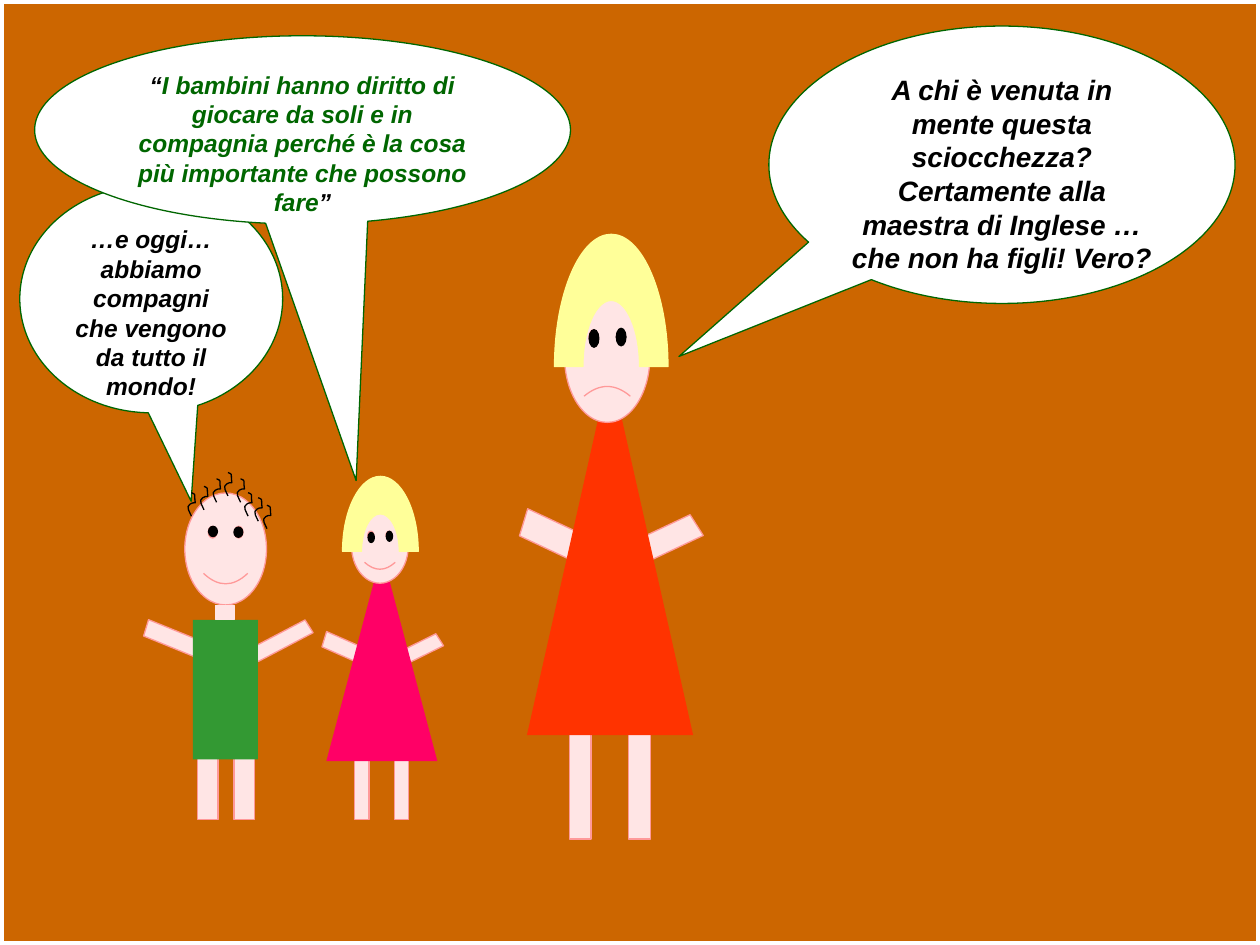
from dataclasses import dataclass
from typing import NamedTuple, Optional

import lxml.etree
import pptx
import pptx.dml.color
import pptx.enum.shapes
import pptx.enum.text
import pptx.oxml.ns
import pptx.util

Pt = pptx.util.Pt
MSO = pptx.enum.shapes.MSO_SHAPE
qn = pptx.oxml.ns.qn
Point = tuple[float, float]

SKIN, BLUSH, BLOND = "FFE5E5", "FF9999", "FFFF99"
BLACK, WHITE, GREEN = "000000", "FFFFFF", "006600"
KAPPA = 0.55


class Box(NamedTuple):
    x: float
    y: float
    w: float
    h: float


@dataclass
class Figure:
    right_arm: Box
    left_arm: Box
    legs: list[Box]
    body: Box
    body_kind: int
    body_color: str
    head: Box
    smile: float
    eyes: list[Box]
    hair: Optional[Box] = None


@dataclass
class Bubble:
    box: Box
    tip: Point
    size: float
    runs: list[tuple[str, str]]


CHILD_SMILE, FROWN = 0.047, -0.037

BOY = Figure(
    Box(155.2, 348.5, 11.5, 35.3), Box(93.4, 347.8, 13, 35.3),
    [Box(x, 427, 11.7, 41.4) for x in (112.9, 133.7)],
    Box(110.2, 354.2, 37.2, 79.8), MSO.RECTANGLE, "339933",
    Box(105.6, 281.7, 46.7, 64), CHILD_SMILE,
    [Box(133.3, 300.8, 5.8, 6.6), Box(118.8, 300.4, 5.8, 6.6)])
GIRL = Figure(
    Box(234.5, 358.6, 10.8, 25.2), Box(190.8, 357.8, 12.2, 25.2),
    [Box(x, 428.4, 8.1, 39.8) for x in (202.8, 225.4)],
    Box(186.5, 315.4, 63.4, 119.5), MSO.ISOSCELES_TRIANGLE, "FF0066",
    Box(200.9, 290.9, 32.4, 42.4), CHILD_SMILE,
    [Box(220.4, 303.2, 4.3, 6.5), Box(210, 303.9, 4.3, 6.5)],
    Box(195.8, 272.2, 43.2, 85.7))
WOMAN = Figure(
    Box(371.7, 289.4, 18.7, 37.4), Box(305.5, 287.8, 21.6, 37.4),
    [Box(x, 409.7, 12.4, 69.8) for x in (325.4, 359.2)],
    Box(301.1, 209.4, 95, 210.7), MSO.ISOSCELES_TRIANGLE, "FF3300",
    Box(322.6, 166, 48.8, 75.4), FROWN,
    [Box(351.8, 187.2, 6.3, 10.8), Box(336.3, 188, 6.3, 10.8)],
    Box(316.9, 133.9, 64.8, 151.2))

NECK = Box(123.1, 346, 10.8, 8)
CURL = [[(3.6, 13.4)], [(2.9, 11.5), (0, 7.9), (2.9, 6.5)],
        [(3.6, 5.8), (5, 5.8), (5.8, 5.8)], [(5, 0), (6.5, 1.4), (3.6, 0)]]
CURL_SPOTS = [(105.8, 281.5), (113, 277.9), (133.9, 273.6), (138.2, 281.5),
              (126.7, 270), (149, 288.7), (144, 284.4), (120.2, 273.6)]

TODAY = Bubble(
    Box(11.3, 105.6, 150.2, 130.3), (0.152, 0.888), 14,
    [("…e oggi… abbiamo compagni che vengono da tutto il mondo!", BLACK)])
DOUBT = Bubble(
    Box(439.4, 14.9, 266.4, 158.5), (-0.693, 0.691), 16,
    [("A chi è venuta in mente questa sciocchezza? Certamente alla maestra "
      "di Inglese … che non ha figli! Vero?", BLACK)])
RIGHT_TO_PLAY = Bubble(
    Box(19.8, 20.5, 306.2, 107.6), (0.1, 1.862), 14,
    [("“", BLACK),
     ("I bambini hanno diritto di giocare da soli e in compagnia perché è "
      "la cosa più importante che possono fare", GREEN),
     ("”", BLACK)])


def rgb(color: str) -> pptx.dml.color.RGBColor:
    return pptx.dml.color.RGBColor.from_string(color)


def paint(sp, fill: Optional[str], line: Optional[str], width: float = 0.75) -> None:
    sp.shadow.inherit = False
    if fill:
        sp.fill.solid()
        sp.fill.fore_color.rgb = rgb(fill)
    else:
        sp.fill.background()
    if line:
        sp.line.color.rgb = rgb(line)
        sp.line.width = Pt(width)
    else:
        sp.line.fill.background()


def add_shape(shapes, kind: int, box: Box, fill: Optional[str],
              line: Optional[str] = None, width: float = 0.75):
    sp = shapes.add_shape(kind, *map(Pt, box))
    paint(sp, fill, line, width)
    return sp


def add_curve(shapes, segments: list[list[Point]], fill: Optional[str],
              line: str, close: bool):
    points = [(Pt(x), Pt(y)) for segment in segments for x, y in segment]
    builder = shapes.build_freeform(*points[0], scale=1.0)
    builder.add_line_segments(points[1:], close=close)
    sp = builder.convert_to_shape()
    outline = next(sp._element.iter(qn("a:path")))
    steps = iter(outline.findall(qn("a:lnTo")))
    for segment in segments[1:]:
        first = next(steps)
        if len(segment) == 3:
            curve = lxml.etree.Element(qn("a:cubicBezTo"))
            first.addprevious(curve)
            for step in (first, next(steps), next(steps)):
                curve.append(step[0])
                outline.remove(step)
    paint(sp, fill, line)
    return sp, outline


def half_ellipse(cx: float, cy: float, rx: float, ry: float) -> list[list[Point]]:
    kx, ky = rx * KAPPA, ry * KAPPA
    return [[(cx - rx, cy)],
            [(cx - rx, cy - ky), (cx - kx, cy - ry), (cx, cy - ry)],
            [(cx + kx, cy - ry), (cx + rx, cy - ky), (cx + rx, cy)]]


def add_hair(shapes, box: Box) -> None:
    cx, cy = box.x + box.w / 2, box.y + box.h / 2
    inner = half_ellipse(cx, cy, box.w / 4, box.h / 4)
    outer = half_ellipse(cx, cy, -box.w / 2, box.h / 2)
    sp, outline = add_curve(shapes, inner + outer + inner[:1], BLOND, BLOND, True)
    sp.height *= 2
    outline.set("h", str(sp.height))


def add_figure(slide, fig: Figure):
    shapes = slide.shapes.add_group_shape().shapes
    for arm, angle in ((fig.right_arm, 57.6), (fig.left_arm, 106.9)):
        sp = add_shape(shapes, MSO.PARALLELOGRAM, arm, SKIN, BLUSH)
        sp.adjustments[0] = 0.25
        sp.rotation = angle
    for leg in fig.legs:
        add_shape(shapes, MSO.RECTANGLE, leg, SKIN, BLUSH)
    add_shape(shapes, fig.body_kind, fig.body, fig.body_color)
    head = add_shape(shapes, MSO.SMILEY_FACE, fig.head, SKIN, BLUSH)
    head.adjustments[0] = fig.smile
    if fig.hair:
        add_hair(shapes, fig.hair)
    for eye in fig.eyes:
        add_shape(shapes, MSO.OVAL, eye, BLACK)
    return shapes


def add_bubble(slide, bubble: Bubble) -> None:
    sp = add_shape(slide.shapes, MSO.OVAL_CALLOUT, bubble.box, WHITE, GREEN)
    sp.adjustments[0], sp.adjustments[1] = bubble.tip
    tf = sp.text_frame
    tf.word_wrap = True
    tf.vertical_anchor = pptx.enum.text.MSO_ANCHOR.TOP
    p = tf.paragraphs[0]
    p.alignment = pptx.enum.text.PP_ALIGN.CENTER
    p.font.name, p.font.size = "Arial", Pt(bubble.size)
    p.font.bold = p.font.italic = True
    for text, color in bubble.runs:
        r = p.add_run()
        r.text = text
        r.font.color.rgb = rgb(color)


def main() -> None:
    prs = pptx.Presentation()
    prs.slide_width, prs.slide_height = Pt(720), Pt(540)
    s = prs.slides.add_slide(prs.slide_layouts[6])
    s.background.fill.solid()
    s.background.fill.fore_color.rgb = rgb("CC6600")

    add_bubble(s, TODAY)
    add_shape(s.shapes, MSO.RECTANGLE, Box(0, 0, 720, 540), None, WHITE, 4.5)
    boy = add_figure(s, BOY)
    add_shape(boy, MSO.RECTANGLE, NECK, SKIN, SKIN)
    for x, y in CURL_SPOTS:
        curl = [[(x + dx, y + dy) for dx, dy in segment] for segment in CURL]
        add_curve(boy, curl, None, BLACK, False)
    add_figure(s, GIRL)
    add_bubble(s, DOUBT)
    add_bubble(s, RIGHT_TO_PLAY)
    add_figure(s, WOMAN)
    prs.save("out.pptx")


if __name__ == "__main__":
    main()
